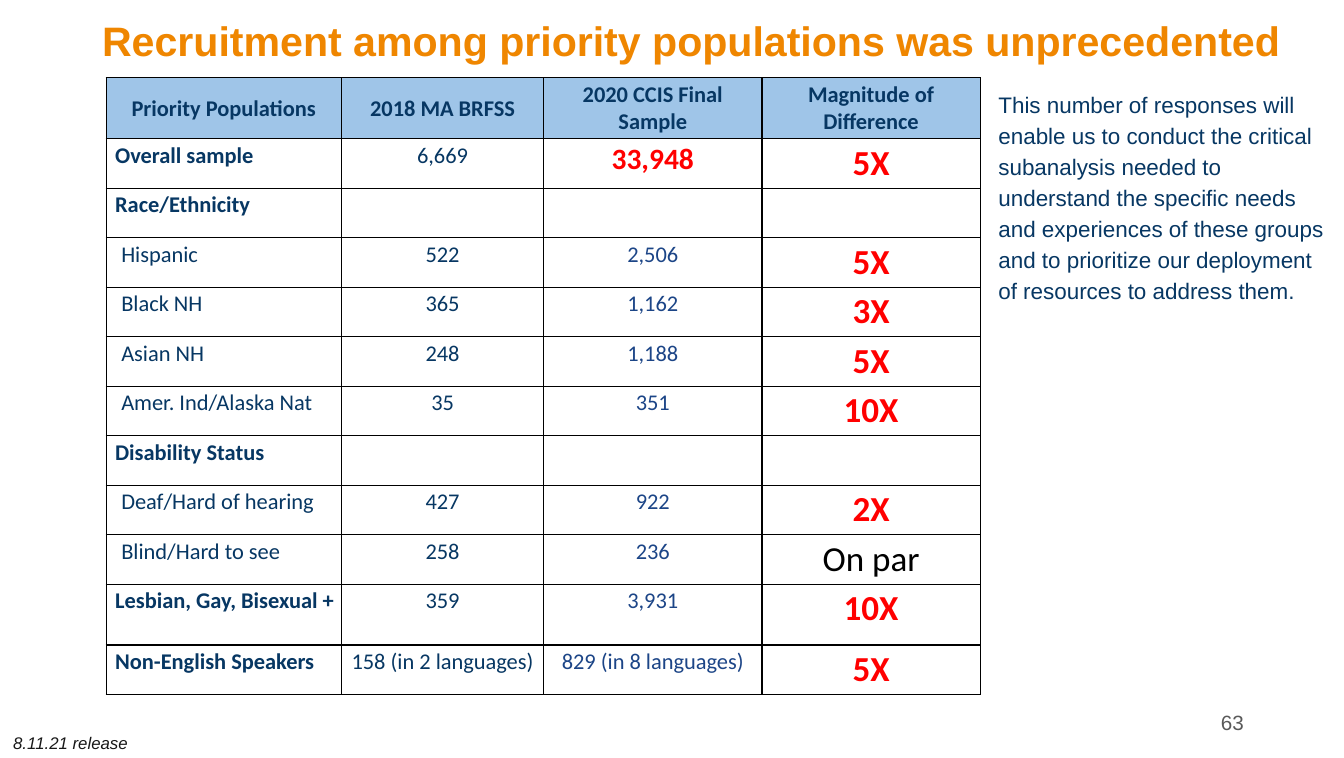
from lxml import etree
from pptx import Presentation
from pptx.dml.color import RGBColor
from pptx.enum.text import MSO_ANCHOR, PP_ALIGN
from pptx.oxml.ns import qn
from pptx.util import Inches, Pt

ORANGE = RGBColor(0xEF, 0x86, 0x00)
NAVY = RGBColor(0x07, 0x37, 0x63)
BLUE = RGBColor(0x1C, 0x45, 0x87)
LIGHT_BLUE = RGBColor(0x9F, 0xC5, 0xE8)
RED = RGBColor(0xFF, 0x00, 0x00)
BLACK = RGBColor(0x00, 0x00, 0x00)
GRAY = RGBColor(0x59, 0x59, 0x59)
DARK = RGBColor(0x18, 0x18, 0x18)

COLUMN_WIDTHS = [2.33, 2, 2.16, 2.16]
ROW_HEIGHT = 0.49
TALL_ROW_HEIGHT = 0.6
HEADINGS = ["Priority Populations", "2018 MA BRFSS",
            "2020 CCIS Final Sample", "Magnitude of Difference"]
ROWS = [
    ["Overall sample", "6,669", "33,948", "5X"],
    ["Race/Ethnicity", "", "", ""],
    ["Hispanic", "522", "2,506", "5X"],
    ["Black NH", "365", "1,162", "3X"],
    ["Asian NH", "248", "1,188", "5X"],
    ["Amer. Ind/Alaska Nat", "35", "351", "10X"],
    ["Disability Status", "", "", ""],
    ["Deaf/Hard of hearing", "427", "922", "2X"],
    ["Blind/Hard to see", "258", "236", "On par"],
    ["Lesbian, Gay, Bisexual +", "359", "3,931", "10X"],
    ["Non-English Speakers", "158 (in 2 languages)", "829 (in 8 languages)", "5X"],
]
SUBGROUPS = {"Hispanic", "Black NH", "Asian NH", "Amer. Ind/Alaska Nat",
             "Deaf/Hard of hearing", "Blind/Hard to see"}
TALL_ROWS = {HEADINGS[0], "Lesbian, Gay, Bisexual +"}


def style_text(paragraph, size, color, font="Arial", bold=False, italic=False):
    for run in paragraph.runs:
        run.font.name = font
        run.font.size = Pt(size)
        run.font.color.rgb = color
        run.font.bold = bold
        run.font.italic = italic


def set_margins(frame, horizontal, vertical):
    frame.margin_left = frame.margin_right = Inches(horizontal)
    frame.margin_top = frame.margin_bottom = Inches(vertical)


def add_title(slide, left, top, width, height):
    title = slide.shapes.title
    title.left, title.top = Inches(left), Inches(top)
    title.width, title.height = Inches(width), Inches(height)
    frame = title.text_frame
    frame.text = "Recruitment among priority populations was unprecedented"
    frame.vertical_anchor = MSO_ANCHOR.MIDDLE
    set_margins(frame, 0.1, 0.05)
    paragraph = frame.paragraphs[0]
    paragraph.alignment = PP_ALIGN.LEFT
    paragraph.line_spacing = 0.9
    style_text(paragraph, 29.3, ORANGE, bold=True)


def add_borders(cell):
    properties = cell._tc.get_or_add_tcPr()
    for position, side in enumerate(("lnL", "lnR", "lnT", "lnB")):
        line = etree.Element(qn(f"a:{side}"), w=str(Pt(1)))
        fill = etree.SubElement(line, qn("a:solidFill"))
        etree.SubElement(fill, qn("a:srgbClr"), val=str(BLACK))
        properties.insert(position, line)


def body_style(label, column, text):
    """Return size, colour and weight of a cell below the heading row."""
    if column == 0:
        return 16, NAVY, label not in SUBGROUPS
    if column == 3:
        return (25, BLACK, False) if text == "On par" else (25, RED, True)
    if column == 2:
        return (21, RED, True) if label == "Overall sample" else (16, BLUE, False)
    return 16, NAVY, False


def fill_cell(cell, text, label, column):
    heading = label == HEADINGS[0]
    cell.text_frame.text = text
    set_margins(cell, 0.03, 0.03)
    cell.vertical_anchor = MSO_ANCHOR.MIDDLE if heading else MSO_ANCHOR.TOP
    if heading:
        cell.fill.solid()
        cell.fill.fore_color.rgb = LIGHT_BLUE
    else:
        cell.fill.background()
    add_borders(cell)
    paragraph = cell.text_frame.paragraphs[0]
    if heading or column > 0:
        paragraph.alignment = PP_ALIGN.CENTER
    else:
        indent = 0.12 if label in SUBGROUPS else 0.06
        paragraph._p.get_or_add_pPr().set("marL", str(Inches(indent)))
    size, color, bold = (16, NAVY, True) if heading else body_style(label, column, text)
    style_text(paragraph, size, color, "Calibri", bold)


def add_population_table(slide, left, top):
    rows = [HEADINGS] + ROWS
    heights = [TALL_ROW_HEIGHT if row[0] in TALL_ROWS else ROW_HEIGHT for row in rows]
    table = slide.shapes.add_table(
        len(rows), len(HEADINGS), Inches(left), Inches(top),
        Inches(sum(COLUMN_WIDTHS)), Inches(sum(heights))).table
    table.horz_banding = False
    for column, width in zip(table.columns, COLUMN_WIDTHS):
        column.width = Inches(width)
    for row_index, (row, height) in enumerate(zip(rows, heights)):
        table.rows[row_index].height = Inches(height)
        for column, text in enumerate(row):
            fill_cell(table.cell(row_index, column), text, row[0], column)


def add_text(slide, box, text, margins, size, color, wrap=True, italic=False):
    frame = slide.shapes.add_textbox(*map(Inches, box)).text_frame
    frame.word_wrap = wrap
    set_margins(frame, *margins)
    frame.text = text
    style_text(frame.paragraphs[0], size, color, italic=italic)
    return frame


def add_commentary(slide, box):
    frame = add_text(
        slide, box,
        "This number of responses will enable us to conduct the critical subanalysis "
        "needed to understand the specific needs and experiences of these groups and "
        "to prioritize our deployment of resources to address them.",
        (0.13, 0.13), 16, NAVY)
    frame.paragraphs[0].line_spacing = 1.15
    frame.paragraphs[0].space_after = Pt(21.3)


def add_footer(slide, number_box, release_box):
    number = add_text(slide, number_box, "63", (0.07, 0.04), 14.7, GRAY)
    number.vertical_anchor = MSO_ANCHOR.MIDDLE
    number.paragraphs[0].alignment = PP_ALIGN.RIGHT
    add_text(slide, release_box, "8.11.21 release", (0.13, 0.07), 12, DARK,
             wrap=False, italic=True)


def main():
    presentation = Presentation()
    presentation.slide_width = Inches(13.3)
    presentation.slide_height = Inches(7.5)
    slide = presentation.slides.add_slide(presentation.slide_layouts[5])
    add_title(slide, 0.91, 0.07, 11.88, 0.71)
    add_population_table(slide, 1.05, 0.77)
    add_commentary(slide, (9.75, 0.73, 3.49, 0.86))
    add_footer(slide, (9.39, 6.95, 2.99, 0.4), (0, 7.18, 1.42, 0.34))
    presentation.save("out.pptx")


if __name__ == "__main__":
    main()
